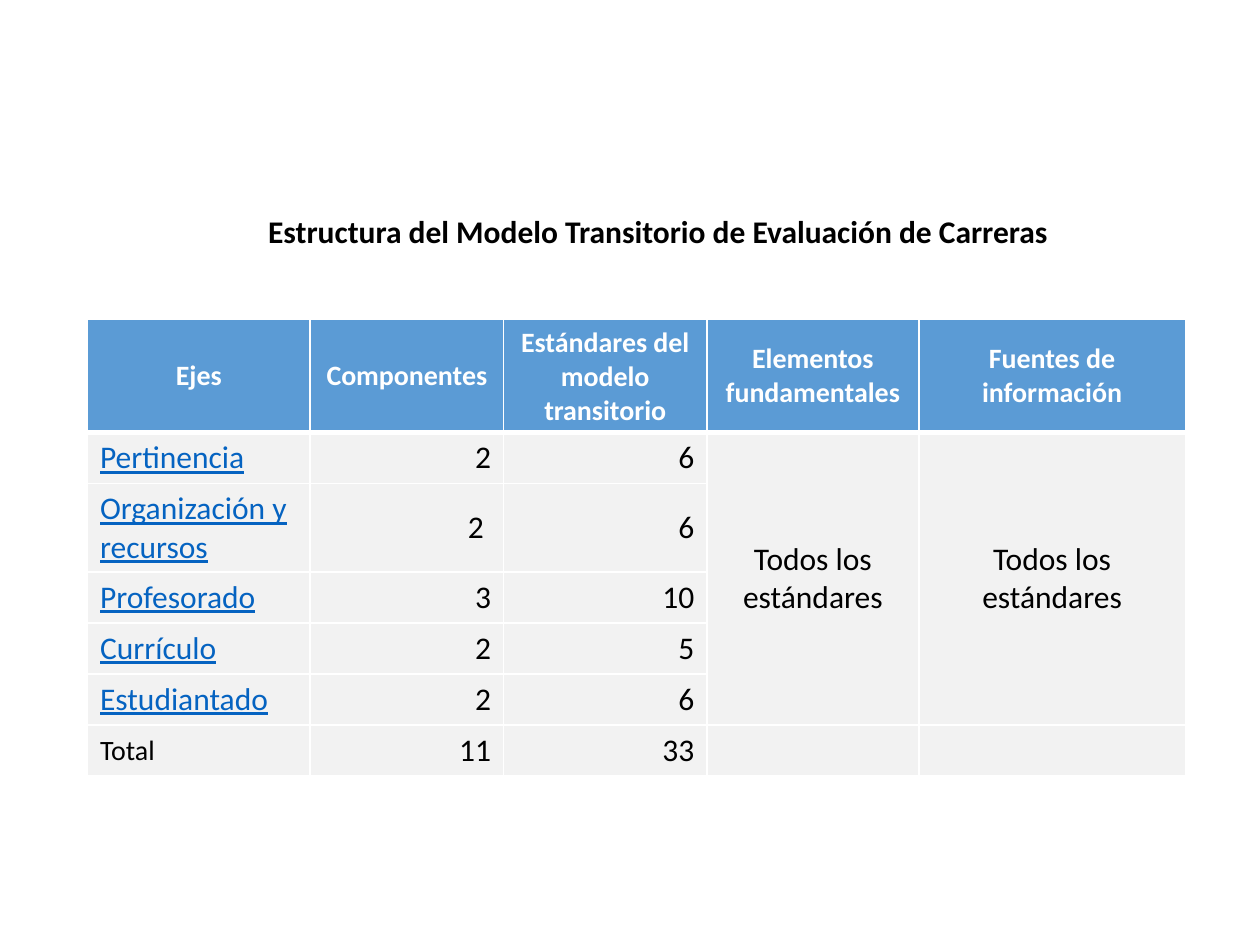
from lxml.etree import SubElement
from pptx import Presentation
from pptx.dml.color import RGBColor
from pptx.enum.text import MSO_ANCHOR as Anchor, MSO_AUTO_SIZE as AutoSize, PP_ALIGN as Align
from pptx.oxml.ns import qn
from pptx.util import Pt

COLORS = {"header": "5B9BD5", "body": "F2F2F2", "white": "FFFFFF", "black": "000000", "link": "0563C1"}


def write(frame, text, size=18, color="black", bold=False, underline=False, align=Align.LEFT):
    paragraph = frame.paragraphs[0]
    paragraph.alignment = align
    run = paragraph.add_run()
    run.text = text
    run.font.name = "Calibri"
    run.font.size = Pt(size)
    run.font.bold = bold
    run.font.underline = underline
    run.font.color.rgb = RGBColor.from_string(COLORS[color])


def add_borders(cell, **widths):
    properties = cell._tc.get_or_add_tcPr()
    for side, width in widths.items():
        line = SubElement(properties, qn(f"a:ln{side}"), w=str(Pt(width)))
        SubElement(SubElement(line, qn("a:solidFill")), qn("a:srgbClr"), val=COLORS["white"])


presentation = Presentation()
presentation.slide_width, presentation.slide_height = Pt(720), Pt(540)
slide = presentation.slides.add_slide(presentation.slide_layouts[5])

heading = slide.shapes.title
heading.left, heading.top, heading.width, heading.height = Pt(146), Pt(117.5), Pt(464), Pt(29)
heading.text_frame.word_wrap = False
heading.text_frame.auto_size = AutoSize.SHAPE_TO_FIT_TEXT
heading.text_frame.vertical_anchor = Anchor.TOP
write(heading.text_frame, "Estructura del Modelo Transitorio de Evaluación de Carreras", bold=True)

all_standards = "Todos los estándares"
rows = [
    ["Ejes", "Componentes", "Estándares del modelo transitorio", "Elementos fundamentales", "Fuentes de información"],
    ["Pertinencia", "2", "6", all_standards, all_standards],
    ["Organización y recursos", "2 ", "6", "", ""],
    ["Profesorado", "3", "10", "", ""],
    ["Currículo", "2", "5", "", ""],
    ["Estudiantado", "2", "6", "", ""],
    ["Total", "11", "33", "", ""],
]
column_widths = [127.3, 110.5, 116.2, 121.1, 152.3]
row_heights = [64, 29.2, 50.4, 29.2, 29.2, 29.2, 29.2]
last_row = len(rows) - 1
column_aligns = [Align.LEFT, Align.RIGHT, Align.RIGHT, Align.CENTER, Align.CENTER]

structure = slide.shapes.add_table(
    len(rows), len(column_widths), Pt(50), Pt(182.3), Pt(sum(column_widths)), Pt(sum(row_heights))
).table
structure.horz_banding = False
for column, width in zip(structure.columns, column_widths):
    column.width = Pt(width)
for row, height in zip(structure.rows, row_heights):
    row.height = Pt(height)
for column_index in (3, 4):
    structure.cell(1, column_index).merge(structure.cell(last_row - 1, column_index))

for row_index, texts in enumerate(rows):
    is_header = row_index == 0
    for column_index, text in enumerate(texts):
        cell = structure.cell(row_index, column_index)
        add_borders(cell, L=1, R=1, T=3 if row_index == 1 else 1, B=3 if is_header else 1)
        cell.fill.solid()
        cell.fill.fore_color.rgb = RGBColor.from_string(COLORS["header" if is_header else "body"])
        cell.vertical_anchor = Anchor.MIDDLE
        if not text:
            continue
        if is_header:
            write(cell.text_frame, text, size=16, color="white", bold=True, align=Align.CENTER)
        elif column_index == 0 and row_index < last_row:
            write(cell.text_frame, text, color="link", underline=True)
        else:
            write(cell.text_frame, text, size=16 if column_index == 0 else 18, align=column_aligns[column_index])

presentation.save("out.pptx")
